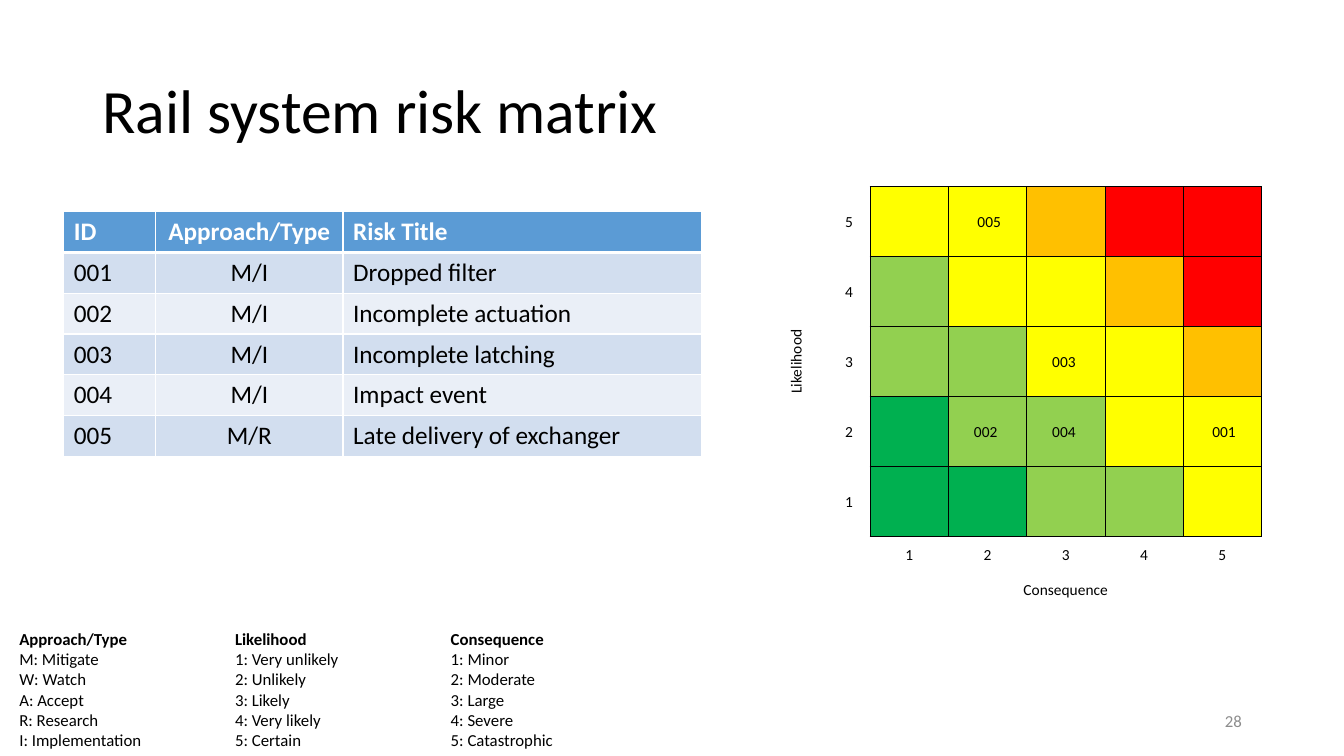
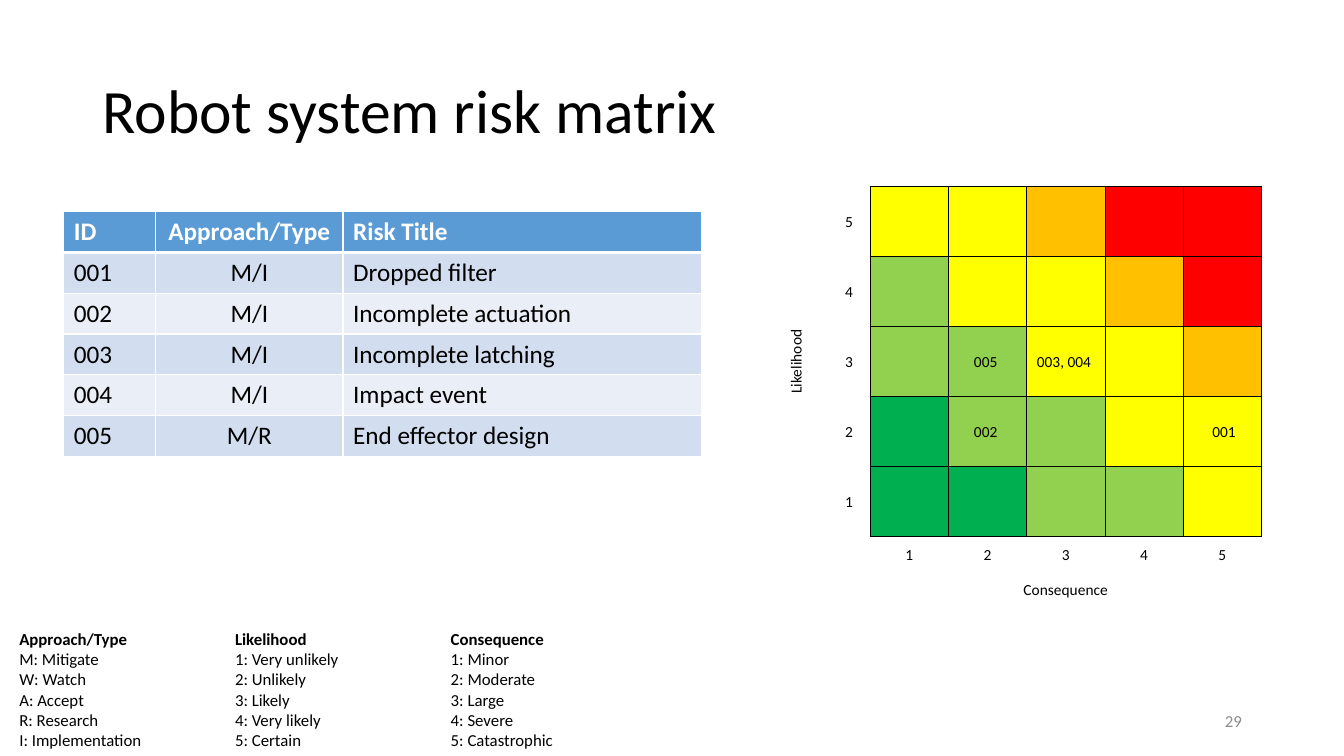
"""Builds two risk matrix slides, each with a risk list and a scale key."""
from lxml import etree
from pptx import Presentation
from pptx import util as u
from pptx.dml.color import RGBColor
from pptx.enum import text
from pptx.oxml.ns import qn

W, H = u.Inches(13.33), u.Inches(7.5)
FONT = "Calibri"
BLACK = RGBColor(0x00, 0x00, 0x00)
WHITE = RGBColor(0xFF, 0xFF, 0xFF)
GREY = RGBColor(0x8C, 0x8C, 0x8C)
BLUE = RGBColor(0x5B, 0x9B, 0xD5)
BANDS = RGBColor(0xD2, 0xDE, 0xEF), RGBColor(0xEA, 0xEF, 0xF7)
HEAT = {
    "D": RGBColor(0x00, 0xB0, 0x50),
    "G": RGBColor(0x92, 0xD0, 0x50),
    "Y": RGBColor(0xFF, 0xFF, 0x00),
    "O": RGBColor(0xFF, 0xC0, 0x00),
    "R": RGBColor(0xFF, 0x00, 0x00),
}
GRID = ["YYORR", "GYYOR", "GGYYO", "DGGYY", "DDGGY"]
LEFT, MID, RIGHT = text.PP_ALIGN.LEFT, text.PP_ALIGN.CENTER, text.PP_ALIGN.RIGHT
CENTER = text.MSO_ANCHOR.MIDDLE

HEAD = ("ID", "Approach/Type", "Risk Title")
RISKS = [
    ("001", "M/I", "Dropped filter"),
    ("002", "M/I", "Incomplete actuation"),
    ("003", "M/I", "Incomplete latching"),
    ("004", "M/I", "Impact event"),
]
KEYS = [
    ("Approach/Type", "M: Mitigate", "W: Watch", "A: Accept",
     "R: Research", "I: Implementation"),
    ("Likelihood", "1: Very unlikely", "2: Unlikely", "3: Likely",
     "4: Very likely", "5: Certain"),
    ("Consequence", "1: Minor", "2: Moderate", "3: Large",
     "4: Severe", "5: Catastrophic"),
]
SLIDES = [
    ("Rail system risk matrix", "28", "Late delivery of exchanger",
     {(5, 2): " 005", (3, 3): "003 ", (2, 2): "002 ",
      (2, 3): "004 ", (2, 5): " 001"}),
    ("Robot system risk matrix", "29", "End effector design",
     {(3, 2): "005 ", (3, 3): "003, 004 ", (2, 2): "002 ",
      (2, 5): " 001"}),
]


def area(left, top, wide, high):
    """Turn percentages of the slide into a box."""
    return [int(size * part / 100)
            for size, part in zip((W, H, W, H), (left, top, wide, high))]


def write(para, words, size, color=BLACK, bold=False, align=LEFT):
    """Add one formatted run to a paragraph."""
    para.alignment = align
    run = para.add_run()
    run.text = words
    run.font.name = FONT
    run.font.size = u.Pt(size)
    run.font.bold = bold
    run.font.color.rgb = color


def edge(cell, color, sides):
    """Draw the sides given as widths in points, and clear the others."""
    props = cell._tc.get_or_add_tcPr()
    for side in "LRTB":
        width = sides.get(side, 0)
        line = etree.SubElement(props, qn(f"a:ln{side}"), w=str(u.Pt(width)))
        if width:
            fill = etree.SubElement(line, qn("a:solidFill"))
            etree.SubElement(fill, qn("a:srgbClr"), val=str(color))
        else:
            etree.SubElement(line, qn("a:noFill"))


def paint(cell, color=None):
    """Fill a cell, or leave it clear."""
    if color is None:
        cell.fill.background()
    else:
        cell.fill.solid()
        cell.fill.fore_color.rgb = color


def table(slide, box, cols, rows):
    """Add a plain table whose columns and rows share the box by weight."""
    grid = slide.shapes.add_table(len(rows), len(cols), *box).table
    grid.first_row = grid.horz_banding = False
    for col, part in zip(grid.columns, cols):
        col.width = int(box[2] * part / sum(cols))
    for row, part in zip(grid.rows, rows):
        row.height = int(box[3] * part / sum(rows))
    return grid


def matrix(slide, box, marks):
    """Draw the heat grid with its two scales and axis names."""
    grid = table(slide, box, [7] * 2 + [13] * 5, [2] * 5 + [1] * 2)
    labels = {(0, 0): "Likelihood", (6, 2): "Consequence"}
    for num in range(1, 6):
        labels[5 - num, 1] = labels[5, num + 1] = str(num)
    for (like, cons), words in marks.items():
        labels[5 - like, cons + 1] = words
    for row in range(7):
        for col in range(7):
            cell = grid.cell(row, col)
            hot = row < 5 and col > 1
            if hot:
                sides = dict.fromkeys("LRTB", 0.5)
            elif row < 5 and col == 1:
                sides = {"R": 0.5}
            elif row == 5 and col > 1:
                sides = {"T": 0.5}
            else:
                sides = {}
            edge(cell, BLACK, sides)
            paint(cell, HEAT[GRID[row][col - 2]] if hot else None)
            cell.margin_left = cell.margin_right = u.Inches(0.01)
            cell.margin_top, cell.margin_bottom = u.Inches(0.01), 0
            cell.vertical_anchor = CENTER
            if (row, col) in labels:
                write(cell.text_frame.paragraphs[0], labels[row, col], 11,
                      align=MID)
    grid.cell(0, 0).merge(grid.cell(4, 0))
    grid.cell(0, 0)._tc.get_or_add_tcPr().set("vert", "vert270")
    grid.cell(6, 2).merge(grid.cell(6, 6))


def risks(slide, box, last):
    """List the risks under a blue head row."""
    data = [HEAD, *RISKS, ("005", "M/R", last)]
    grid = table(slide, box, [0.91, 1.86, 3.56], [1] * len(data))
    for row, line in enumerate(data):
        top = row == 0
        for col, words in enumerate(line):
            cell = grid.cell(row, col)
            edge(cell, WHITE, {"L": 1, "R": 1, "T": 3 if row == 1 else 1,
                               "B": 3 if top else 1})
            paint(cell, BLUE if top else BANDS[(row - 1) % 2])
            write(cell.text_frame.paragraphs[0], words, 18,
                  WHITE if top else BLACK, top, MID if col == 1 else LEFT)


def note(slide, box, lines, **style):
    """Add a wrapped text box with one paragraph per line."""
    frame = slide.shapes.add_textbox(*box).text_frame
    frame.word_wrap = True
    for num, words in enumerate(lines):
        para = frame.add_paragraph() if num else frame.paragraphs[0]
        write(para, words, 12, bold=len(lines) > 1 and num == 0, **style)
    return frame


def head(slide, box, words):
    """Place and format the title."""
    title = slide.shapes.title
    title.left, title.top, title.width, title.height = box
    frame = title.text_frame
    frame.auto_size = text.MSO_AUTO_SIZE.NONE
    frame.vertical_anchor = CENTER
    frame.paragraphs[0].line_spacing = 0.9
    write(frame.paragraphs[0], words, 44)


def build(deck, title, page, last, marks):
    """Add one risk slide."""
    slide = deck.slides.add_slide(deck.slide_layouts[5])
    head(slide, area(6.88, 5.33, 86.25, 19.33), title)
    foot = note(slide, area(70.65, 92.67, 22.5, 5.33), [page],
                color=GREY, align=RIGHT)
    foot.vertical_anchor = CENTER
    matrix(slide, area(58.46, 24.67, 35.41, 55.6), marks)
    risks(slide, area(4.75, 28, 47.49, 32.4), last)
    for num, lines in enumerate(KEYS):
        frame = note(slide, area(0.7 + 16.05 * num, 82.53, 10.95, 17.46), lines)
        frame.auto_size = text.MSO_AUTO_SIZE.SHAPE_TO_FIT_TEXT


def main():
    """Build and save the deck."""
    deck = Presentation()
    deck.slide_width, deck.slide_height = W, H
    for item in SLIDES:
        build(deck, *item)
    deck.save("out.pptx")


if __name__ == "__main__":
    main()
